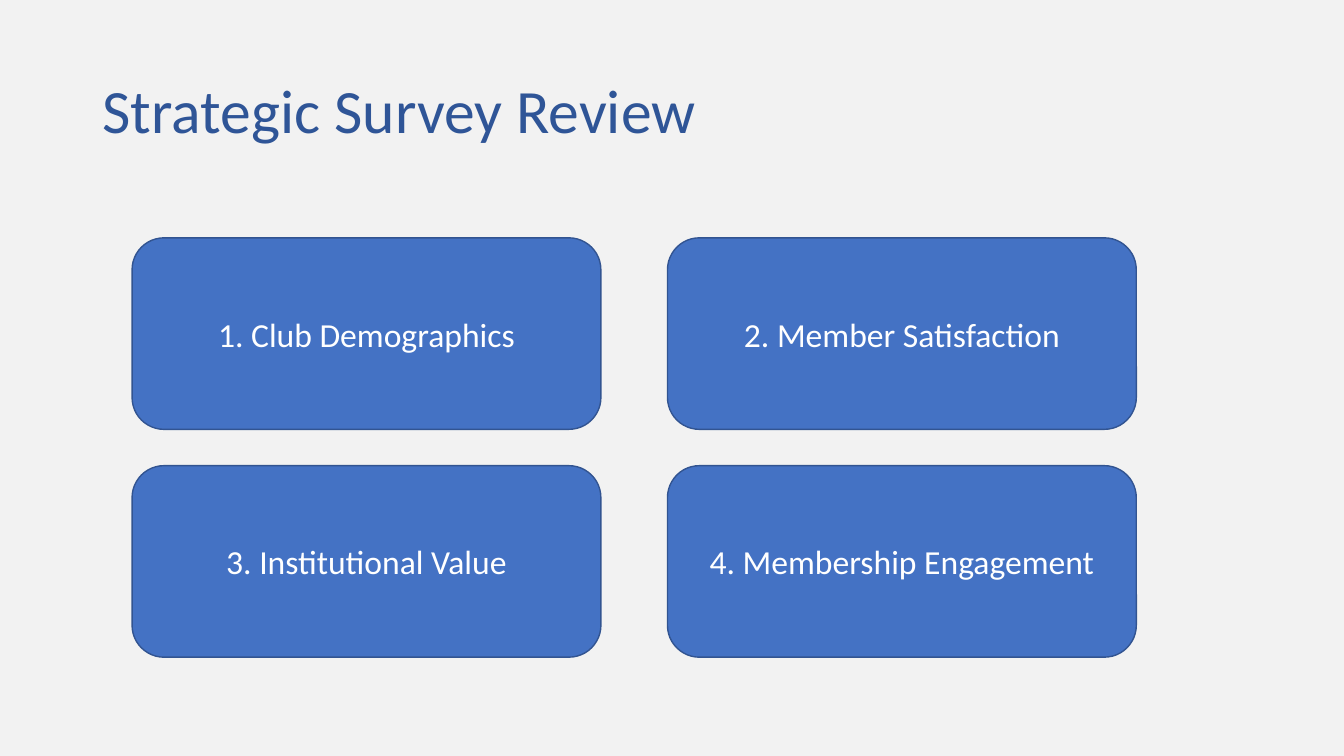
"""Build the Strategic Survey Review slide with its four numbered topics."""
from pptx import Presentation
from pptx.dml.color import RGBColor
from pptx.enum.shapes import MSO_SHAPE
from pptx.enum.text import MSO_ANCHOR, PP_ALIGN
from pptx.util import Inches, Pt

ROUNDED = MSO_SHAPE.ROUNDED_RECTANGLE
MIDDLE = MSO_ANCHOR.MIDDLE
LEFT, CENTER = PP_ALIGN.LEFT, PP_ALIGN.CENTER

BACKGROUND = RGBColor(0xF2, 0xF2, 0xF2)
TITLE_BLUE = RGBColor(0x2F, 0x55, 0x97)
CARD_BLUE = RGBColor(0x44, 0x72, 0xC4)
CARD_EDGE = RGBColor(0x32, 0x54, 0x91)
WHITE = RGBColor(0xFF, 0xFF, 0xFF)

GRID_LEFT, GRID_TOP = 1.31, 2.36
CARD_WIDTH, CARD_HEIGHT = 4.65, 1.9
COLUMN_GAP, ROW_GAP = 0.66, 0.36
COLUMNS = 2
TOPICS = [
    "Club Demographics",
    "Member Satisfaction",
    "Institutional Value",
    "Membership Engagement",
]


def write_text(shape, text, *, size, color, align=LEFT, line_spacing=1.0):
    frame = shape.text_frame
    frame.word_wrap = True
    frame.vertical_anchor = MIDDLE
    paragraph = frame.paragraphs[0]
    paragraph.alignment = align
    paragraph.line_spacing = line_spacing
    run = paragraph.add_run()
    run.text = text
    run.font.name = "Calibri"
    run.font.size = Pt(size)
    run.font.color.rgb = color


deck = Presentation()
deck.slide_width, deck.slide_height = Inches(13.33), Inches(7.5)
slide = deck.slides.add_slide(deck.slide_layouts[6])
slide.background.fill.solid()
slide.background.fill.fore_color.rgb = BACKGROUND

title = slide.shapes.add_textbox(Inches(0.92), Inches(0.4), Inches(11.5), Inches(1.45))
write_text(title, "Strategic Survey Review", size=44, color=TITLE_BLUE, line_spacing=0.9)

for index, topic in enumerate(TOPICS):
    row, column = divmod(index, COLUMNS)
    card = slide.shapes.add_shape(
        ROUNDED,
        Inches(GRID_LEFT + column * (CARD_WIDTH + COLUMN_GAP)),
        Inches(GRID_TOP + row * (CARD_HEIGHT + ROW_GAP)),
        Inches(CARD_WIDTH),
        Inches(CARD_HEIGHT),
    )
    card.shadow.inherit = False
    card.fill.solid()
    card.fill.fore_color.rgb = CARD_BLUE
    card.line.color.rgb = CARD_EDGE
    card.line.width = Pt(1)
    write_text(card, f"{index + 1}. {topic}", size=24, color=WHITE, align=CENTER)

deck.save("out.pptx")
